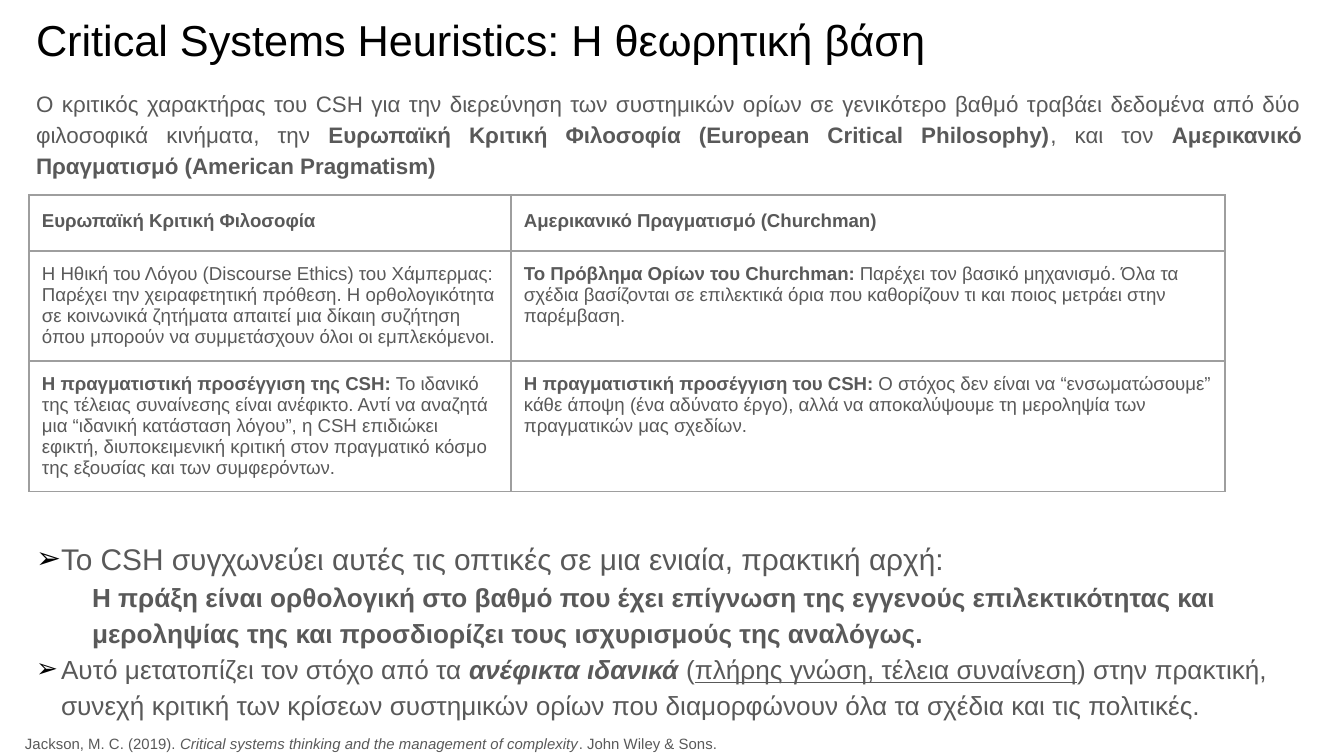
from lxml import etree
from pptx import Presentation
from pptx import util as u
from pptx.dml.color import RGBColor
from pptx.enum import text
from pptx.oxml import ns

PX = 9144000 / 1344
INSET = 13
FONT = "Arial"
COLORS = {"title": "000000", "text": "595959", "bullet": "000000", "border": "9E9E9E"}

TITLE = "Critical Systems Heuristics: Η θεωρητική βάση"

# Runs are (text, style) pairs; style letters are b, i and u.
INTRO = [
    ("Ο κριτικός χαρακτήρας του CSH για την διερεύνηση των συστημικών ορίων σε γενικότερο "
     "βαθμό τραβάει δεδομένα από δύο φιλοσοφικά κινήματα, την ", ""),
    ("Ευρωπαϊκή Κριτική Φιλοσοφία (European Critical Philosophy)", "b"),
    (", και τον ", ""),
    ("Αμερικανικό Πραγματισμό (American Pragmatism)", "b"),
]
MERGE = [("Το CSH συγχωνεύει αυτές τις οπτικές σε μια ενιαία, πρακτική αρχή:", "")]
RULE = [("Η πράξη είναι ορθολογική στο βαθμό που έχει επίγνωση της εγγενούς επιλεκτικότητας και "
         "μεροληψίας της και προσδιορίζει τους ισχυρισμούς της αναλόγως.", "b")]
SHIFT = [
    ("Αυτό μετατοπίζει τον στόχο από τα ", ""),
    ("ανέφικτα ιδανικά ", "bi"),
    ("(", ""),
    ("πλήρης γνώση, τέλεια συναίνεση", "u"),
    (") στην πρακτική, συνεχή κριτική των κρίσεων συστημικών ορίων που διαμορφώνουν "
     "όλα τα σχέδια και τις πολιτικές.", ""),
]
ROWS = [
    [[("Ευρωπαϊκή Κριτική Φιλοσοφία", "b")],
     [("Αμερικανικό Πραγματισμό (Churchman)", "b")]],
    [[("Η Ηθική του Λόγου (Discourse Ethics) του Χάμπερμας: Παρέχει την χειραφετητική πρόθεση. "
       "Η ορθολογικότητα σε κοινωνικά ζητήματα απαιτεί μια δίκαιη συζήτηση όπου μπορούν να "
       "συμμετάσχουν όλοι οι εμπλεκόμενοι.", "")],
     [("Το Πρόβλημα Ορίων του Churchman: ", "b"),
      ("Παρέχει τον βασικό μηχανισμό. Όλα τα σχέδια βασίζονται σε επιλεκτικά όρια που "
       "καθορίζουν τι και ποιος μετράει στην παρέμβαση.", "")]],
    [[("Η πραγματιστική προσέγγιση της CSH: ", "b"),
      ("Το ιδανικό της τέλειας συναίνεσης είναι ανέφικτο. Αντί να αναζητά μια “ιδανική "
       "κατάσταση λόγου”, η CSH επιδιώκει εφικτή, διυποκειμενική κριτική στον πραγματικό "
       "κόσμο της εξουσίας και των συμφερόντων.", "")],
     [("Η πραγματιστική προσέγγιση του CSH: ", "b"),
      ("Ο στόχος δεν είναι να “ενσωματώσουμε” κάθε άποψη (ένα αδύνατο έργο), αλλά να "
       "αποκαλύψουμε τη μεροληψία των πραγματικών μας σχεδίων.", "")]],
]
SOURCE = [
    ("Jackson, M. C. (2019). ", ""),
    ("Critical systems thinking and the management of complexity", "i"),
    (". John Wiley & Sons.", ""),
]


def px(n):
    return u.Emu(round(n * PX))


def child(node, tag, **attrs):
    return etree.SubElement(node, ns.qn(tag), attrs)


def place(shape, box):
    """Move a text shape to its box and set up its frame."""
    shape.left, shape.top, shape.width, shape.height = map(px, box)
    frame = shape.text_frame
    frame.word_wrap = True
    frame.auto_size = text.MSO_AUTO_SIZE.NONE
    frame.vertical_anchor = text.MSO_ANCHOR.TOP
    frame.margin_left = frame.margin_right = px(INSET)
    frame.margin_top = frame.margin_bottom = px(INSET)
    return frame


def write(para, runs, size, color="text", space=1.0, before=0, align="LEFT"):
    para.alignment = getattr(text.PP_ALIGN, align)
    para.line_spacing = space
    para.space_before = u.Pt(before)
    font = para.font
    font.name, font.size = FONT, u.Pt(size)
    font.color.rgb = RGBColor.from_string(COLORS[color])
    for words, style in runs:
        run = para.add_run()
        run.text = words
        if "b" in style:
            run.font.bold = True
        if "i" in style:
            run.font.italic = True
        if "u" in style:
            run.font.underline = True


def indent(para, left, mark=None):
    """Set the left indent, with a hanging bullet if a mark is given."""
    props = para._p.get_or_add_pPr()
    props.set("marL", str(px(left)))
    props.set("indent", str(px(-left) if mark else 0))
    if mark:
        tint = child(props, "a:buClr")
        child(tint, "a:srgbClr", val=COLORS["bullet"])
        child(props, "a:buFont", typeface=FONT)
        child(props, "a:buChar", char=mark)
    else:
        child(props, "a:buNone")


def add_title(slide, box):
    frame = place(slide.shapes.title, box)
    write(frame.paragraphs[0], [(TITLE, "")], 23.2, "title")


def add_body(slide, box):
    """Intro above the table and list below it, in one placeholder."""
    frame = place(slide.placeholders[1], box)
    items = [
        (INTRO, 12, 0, None, 0, "JUSTIFY"),
        (MERGE, 16, 25, "➢", 191, "LEFT"),
        (RULE, 14, 56, None, 0, "LEFT"),
        (SHIFT, 14, 25, "➢", 0, "LEFT"),
    ]
    for i, (runs, size, left, mark, before, align) in enumerate(items):
        para = frame.add_paragraph() if i else frame.paragraphs[0]
        indent(para, left, mark)
        write(para, runs, size, space=1.15, before=before, align=align)


def edge(cell):
    props = cell._tc.get_or_add_tcPr()
    for i, side in enumerate(("a:lnL", "a:lnR", "a:lnT", "a:lnB")):
        line = child(props, side, w=str(u.Pt(0.75)))
        fill = child(line, "a:solidFill")
        child(fill, "a:srgbClr", val=COLORS["border"])
        props.insert(i, line)


def add_grid(slide, box, cols, rows):
    shape = slide.shapes.add_table(len(rows), len(cols), *map(px, box))
    table = shape.table
    table.first_row = table.horz_banding = False
    for col, wide in zip(table.columns, cols):
        col.width = px(wide)
    for row, high in zip(table.rows, rows):
        row.height = px(high)
    for r, line in enumerate(ROWS):
        for c, runs in enumerate(line):
            cell = table.cell(r, c)
            cell.fill.background()
            edge(cell)
            cell.margin_left = cell.margin_right = px(INSET)
            cell.margin_top = cell.margin_bottom = px(INSET)
            write(cell.text_frame.paragraphs[0], runs, 10, space=1.0 if r else 1.15)


def add_source(slide, box):
    frame = place(slide.shapes.add_textbox(0, 0, 0, 0), box)
    write(frame.paragraphs[0], SOURCE, 8)


def main():
    deck = Presentation()
    deck.slide_width, deck.slide_height = px(1344), px(756)
    slide = deck.slides.add_slide(deck.slide_layouts[1])
    add_title(slide, (23, 0, 1292, 85))
    add_body(slide, (23, 73, 1292, 672))
    add_grid(slide, (29, 195, 1196, 297), (482, 714), (56, 110, 131))
    add_source(slide, (12, 722, 1177, 46))
    deck.save("out.pptx")


if __name__ == "__main__":
    main()
